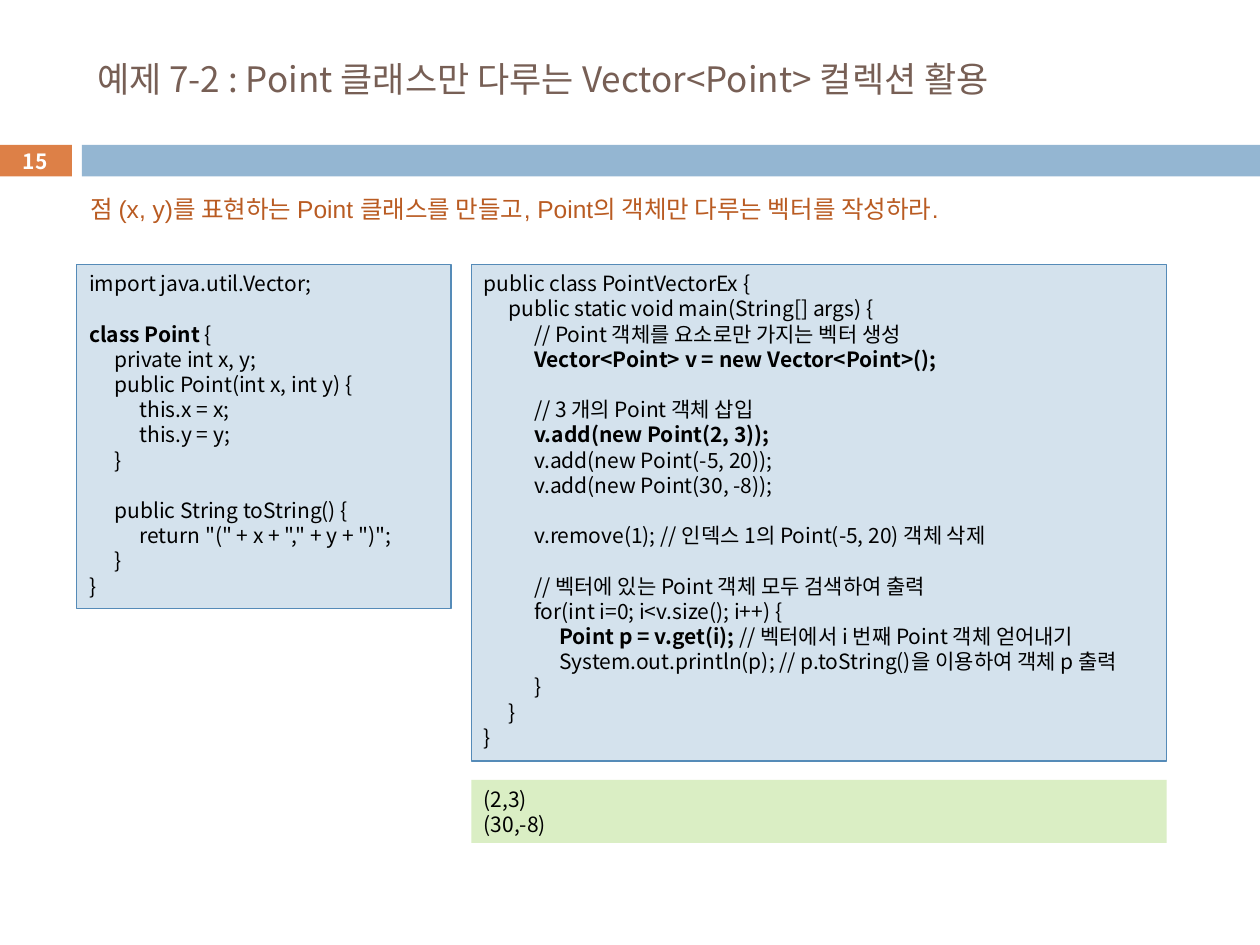
from pptx import Presentation
from pptx.dml.color import RGBColor
from pptx.enum.shapes import MSO_SHAPE as SHAPE
from pptx.enum.text import MSO_ANCHOR as ANCHOR, PP_ALIGN as ALIGN
from pptx.oxml.ns import qn
from pptx.util import Inches, Pt
from lxml.etree import SubElement

COLORS = {
    "title": "775F55", "number": "DD8047", "bar": "94B6D2", "task": "B95B22",
    "code": "D4E2ED", "border": "558BB8", "output": "DAEEC4",
    "black": "000000", "white": "FFFFFF",
}
CJK = "Noto Sans CJK KR"
TAB = 0.2

POINT_CODE = """import java.util.Vector;

**class Point **{
    private int x, y;
    public Point(int x, int y) {
        this.x = x;
        this.y = y;
    }

    public String toString() {
        return "(" + x + "," + y + ")";
    }
}"""

MAIN_CODE = """public class PointVectorEx {
    public static void main(String[] args) {
        // Point 객체를 요소로만 가지는 벡터 생성
        **Vector<Point> v = new Vector<Point>();**

        // 3 개의 Point 객체 삽입
        **v.add(new Point(2, 3));**
        v.add(new Point(-5, 20));
        v.add(new Point(30, -8));

        v.remove(1); // 인덱스 1의 Point(-5, 20) 객체 삭제

        // 벡터에 있는 Point 객체 모두 검색하여 출력
        for(int i=0; i<v.size(); i++) {
            **Point p = v.get(i);** // 벡터에서 i 번째 Point 객체 얻어내기
            System.out.println(p); // p.toString()을 이용하여 객체 p 출력
        }
    }
}"""


def rgb(name):
    return RGBColor.from_string(COLORS[name])


def format_run(r, size, color, font=CJK, bold=False):
    r.font.size, r.font.bold, r.font.name = Pt(size), bold, font
    r.font.color.rgb = rgb(color)
    SubElement(r._r.get_or_add_rPr(), qn("a:ea")).set("typeface", CJK)


def add_rect(s, box, fill, line=None):
    sp = s.shapes.add_shape(SHAPE.RECTANGLE, *map(Inches, box))
    sp.shadow.inherit = False
    sp.fill.solid()
    sp.fill.fore_color.rgb = rgb(fill)
    if line:
        sp.line.color.rgb = rgb(line)
        sp.line.width = Pt(0.75)
    else:
        sp.line.fill.background()
    return sp


def add_title(s, box, text):
    sp = s.shapes.title
    sp.left, sp.top, sp.width, sp.height = map(Inches, box)
    tf = sp.text_frame
    tf.text = text
    tf.vertical_anchor = ANCHOR.MIDDLE
    p = tf.paragraphs[0]
    p.alignment = ALIGN.LEFT
    format_run(p.runs[0], 20, "title")


def add_band(s, box, number):
    """Place the page number block and the bar to its right."""
    left, top, width, height = box
    number_width, gap = 0.58, 0.08
    bar_left = left + number_width + gap
    add_rect(s, (bar_left, top, left + width - bar_left, height), "bar")
    sp = add_rect(s, (left, top, number_width, height), "number")
    tf = sp.text_frame
    tf.margin_top = tf.margin_bottom = 0
    tf.text = number
    tf.vertical_anchor = ANCHOR.MIDDLE
    p = tf.paragraphs[0]
    p.alignment = ALIGN.CENTER
    format_run(p.runs[0], 12, "white", bold=True)


def add_task(s, box, text):
    tf = s.shapes.add_textbox(*map(Inches, box)).text_frame
    tf.word_wrap = False
    tf.text = text
    format_run(tf.paragraphs[0].runs[0], 14, "task", "Arial")


def set_tabs(p):
    tabs = SubElement(p._p.get_or_add_pPr(), qn("a:tabLst"))
    for level in (1, 2, 3):
        tab = SubElement(tabs, qn("a:tab"))
        tab.set("pos", str(Inches(TAB * level)))
        tab.set("algn", "l")


def add_listing(s, box, code, fill, line=None):
    """Place a box of code; ** switches bold on and off, four spaces make a tab."""
    tf = add_rect(s, box, fill, line).text_frame
    tf.word_wrap = True
    tf.vertical_anchor = ANCHOR.TOP
    tf.text = code.replace("    ", "\t")
    for p in tf.paragraphs:
        p.alignment = ALIGN.LEFT
        p.line_spacing = Pt(14.4)
        set_tabs(p)
        parts = p.text.split("**")
        p.text = ""
        for i, part in enumerate(parts):
            if part:
                r = p.add_run()
                r.text = part
                format_run(r, 12, "black", bold=i % 2 == 1)


def main():
    prs = Presentation()
    prs.slide_width, prs.slide_height = Inches(10), Inches(7.5)
    s = prs.slides.add_slide(prs.slide_layouts[5])
    add_title(s, (0.67, 0.25, 8.92, 0.74),
              "예제 7-2 : Point 클래스만 다루는 Vector<Point> 컬렉션 활용")
    add_band(s, (-0.01, 1.15, 10.01, 0.25), "15")
    add_listing(s, (0.61, 2.1, 2.97, 2.73), POINT_CODE, "code", "border")
    add_listing(s, (3.74, 6.19, 5.52, 0.5), "(2,3)\n(30,-8)", "output")
    add_listing(s, (3.74, 2.1, 5.52, 3.94), MAIN_CODE, "code", "border")
    add_task(s, (0.62, 1.49, 7.6, 0.34),
             "점 (x, y)를 표현하는 Point 클래스를 만들고, "
             "Point의 객체만 다루는 벡터를 작성하라.")
    prs.save("out.pptx")


if __name__ == "__main__":
    main()
